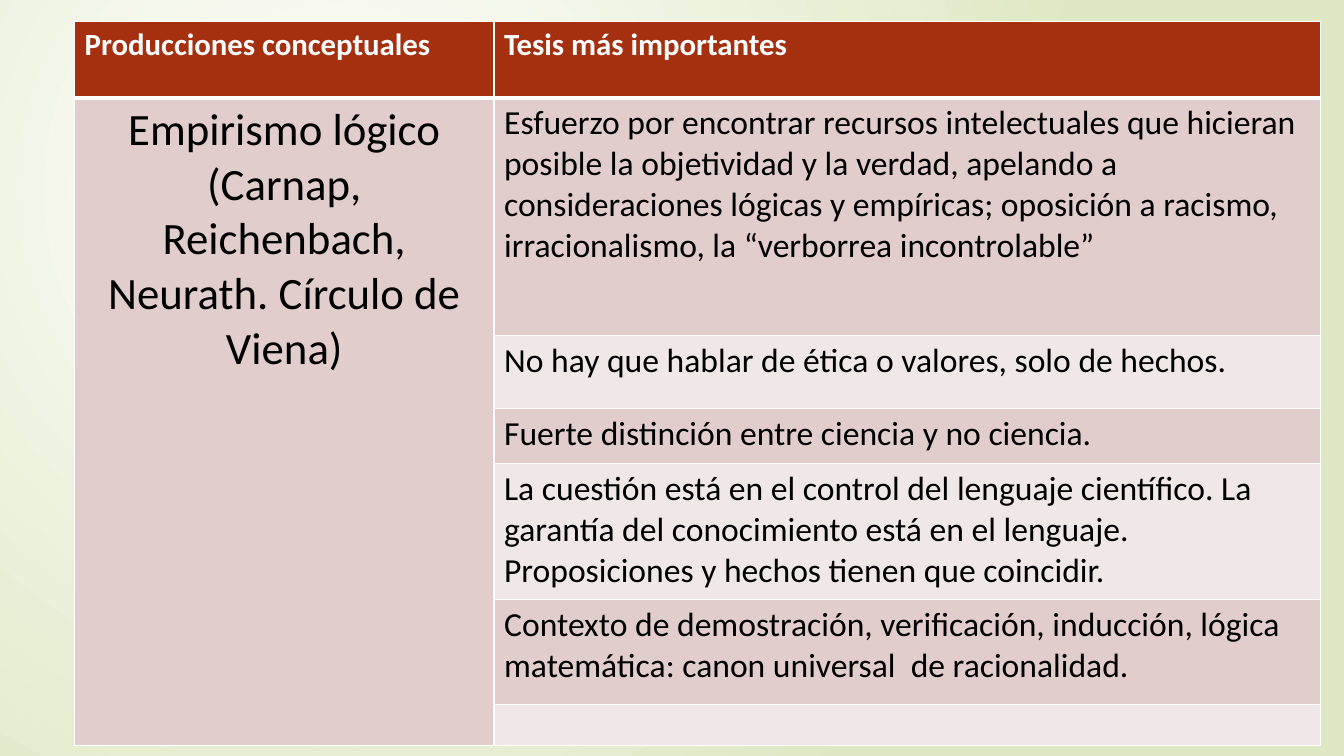
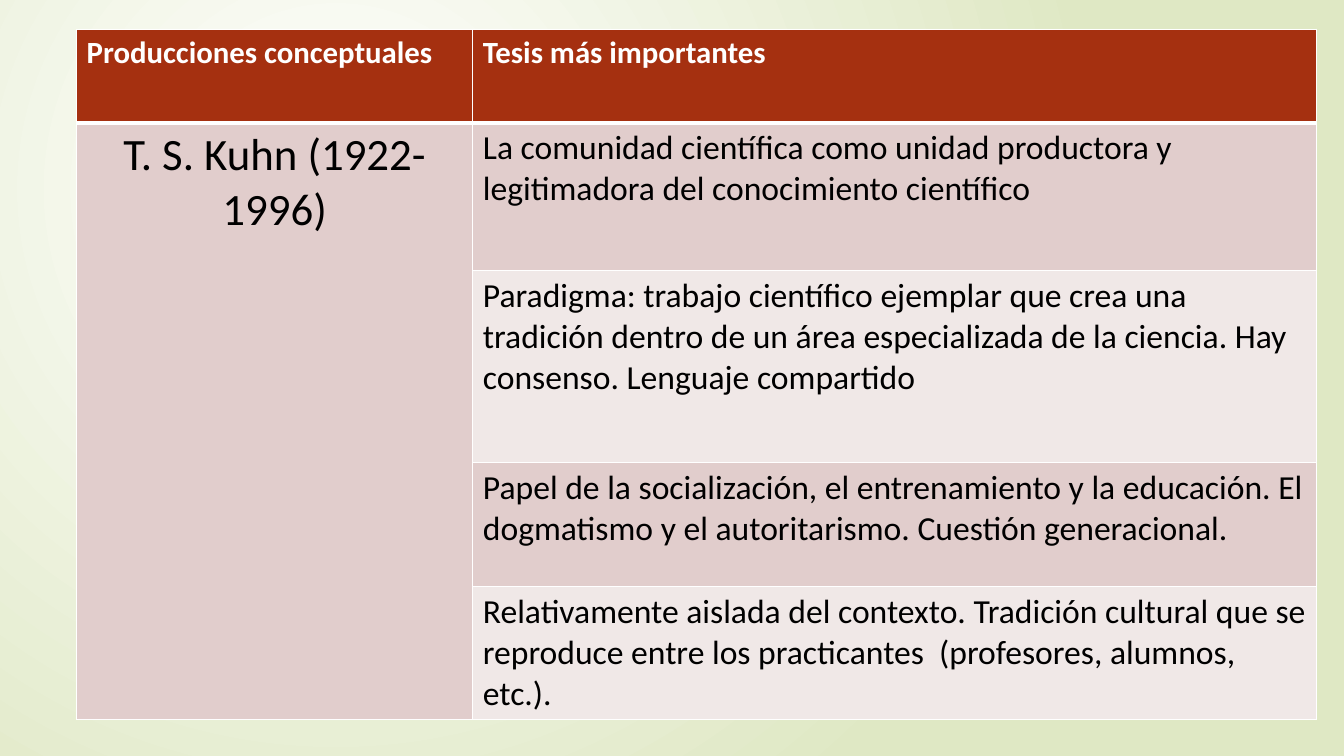
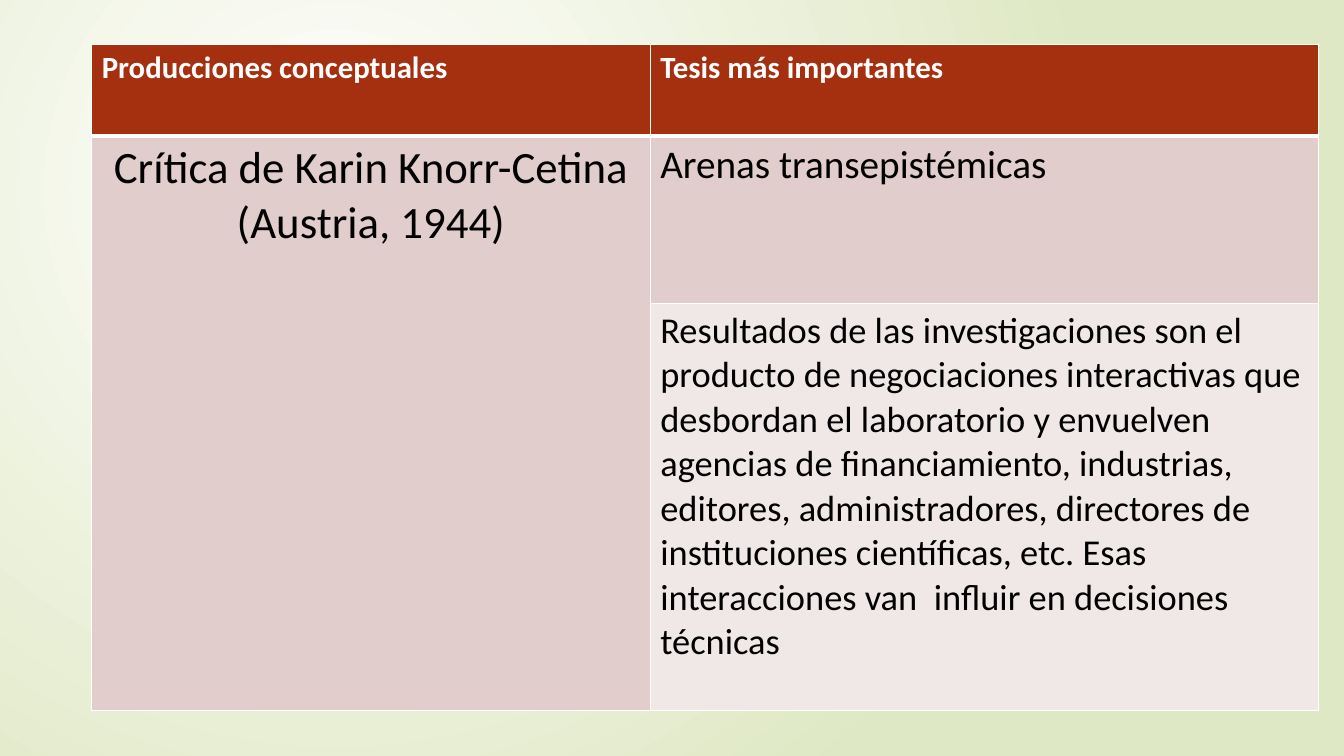
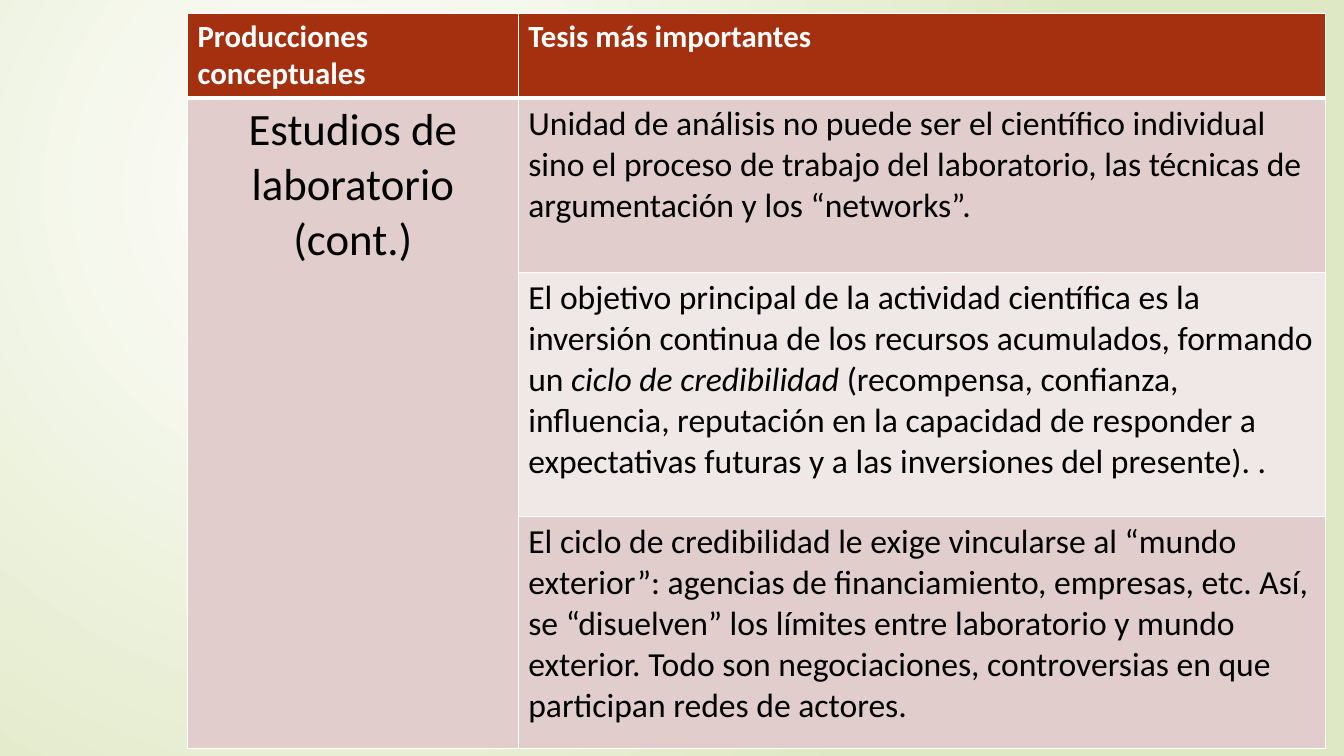
from dataclasses import dataclass

from pptx import Presentation
from pptx.dml.color import RGBColor
from pptx.enum.text import PP_ALIGN
from pptx.oxml import parse_xml
from pptx.oxml.ns import nsdecls
from pptx.util import Pt

PX = 9144  # EMU per px, 100 px to the inch


@dataclass(frozen=True)
class Theme:
    font: str = "Calibri"
    white: str = "FFFFFF"
    black: str = "000000"
    backdrop: str = "DFE8C4"
    header: str = "A53010"
    bands: tuple = ("E1CDCC", "F0E8E7")
    header_size: int = 22
    topic_size: int = 32
    thesis_size: int = 24
    border: int = 1
    header_border: int = 3


theme = Theme()
HEADINGS = ("Producciones conceptuales", "Tesis más importantes")
HEADER_FORMAT = {"name": theme.font, "size": Pt(theme.header_size), "bold": True}
TOPIC_FORMAT = {"name": theme.font, "size": Pt(theme.topic_size), "bold": False}

# Each thesis is (row height, text, optional type size); asterisks enclose italics.
TABLES = [
    {
        "at": (74, 21), "columns": (416, 820), "header_height": 76,
        "topic": "Empirismo lógico\n(Carnap, Reichenbach, Neurath. Círculo de Viena)",
        "theses": [
            (236, "Esfuerzo por encontrar recursos intelectuales que hicieran posible la "
                  "objetividad y la verdad, apelando a consideraciones lógicas y empíricas; "
                  "oposición a racismo, irracionalismo, la “verborrea incontrolable”"),
            (72, "No hay que hablar de ética o valores, solo de hechos."),
            (55, "Fuerte distinción entre ciencia y no ciencia."),
            (135, "La cuestión está en el control del lenguaje científico. La garantía del "
                  "conocimiento está en el lenguaje. Proposiciones y hechos tienen que coincidir."),
            (104, "Contexto de demostración, verificación, inducción, lógica matemática: "
                  "canon universal  de racionalidad."),
            (39, ""),
        ],
    },
    {
        "at": (76, 29), "columns": (393, 837), "header_height": 93,
        "topic": "T. S. Kuhn (1922-1996)",
        "theses": [
            (146, "La comunidad científica como unidad productora y legitimadora del "
                  "conocimiento científico"),
            (191, "Paradigma: trabajo científico ejemplar que crea una tradición dentro de un "
                  "área especializada de la ciencia. Hay consenso. Lenguaje compartido"),
            (123, "Papel de la socialización, el entrenamiento y la educación. El dogmatismo "
                  "y el autoritarismo. Cuestión generacional."),
            (131, "Relativamente aislada del contexto. Tradición cultural que se reproduce "
                  "entre los practicantes  (profesores, alumnos, etc.)."),
        ],
    },
    {
        "at": (91, 44), "columns": (554, 663), "header_height": 91,
        "topic": "Crítica de Karin Knorr-Cetina (Austria, 1944)",
        "theses": [
            (166, "Arenas transepistémicas", 28),
            (404, "Resultados de las investigaciones son el producto de negociaciones "
                  "interactivas que desbordan el laboratorio y envuelven agencias de "
                  "financiamiento, industrias, editores, administradores, directores de "
                  "instituciones científicas, etc. Esas interacciones van  influir en "
                  "decisiones técnicas", 26),
        ],
    },
    {
        "at": (186, 13), "columns": (328, 801), "header_height": 84,
        "topic": "Estudios de laboratorio (cont.)",
        "theses": [
            (173, "Unidad de análisis no puede ser el científico individual sino el proceso "
                  "de trabajo del laboratorio, las técnicas de argumentación y los “networks”."),
            (242, "El objetivo principal de la actividad científica es la inversión continua "
                  "de los recursos acumulados, formando un *ciclo de credibilidad* "
                  "(recompensa, confianza, influencia, reputación en la capacidad de responder "
                  "a expectativas futuras y a las inversiones del presente). ."),
            (230, "El ciclo de credibilidad le exige vincularse al “mundo exterior”: agencias "
                  "de financiamiento, empresas, etc. Así, se “disuelven” los límites entre "
                  "laboratorio y mundo exterior. Todo son negociaciones, controversias en que "
                  "participan redes de actores."),
        ],
    },
]


def write_text(cell, text, font_format, color, alignment=PP_ALIGN.LEFT):
    """Fill a cell with one paragraph per line; text between asterisks is italic."""
    for index, line in enumerate(text.split("\n")):
        frame = cell.text_frame
        paragraph = frame.add_paragraph() if index else frame.paragraphs[0]
        paragraph.alignment = alignment
        for part, words in enumerate(line.split("*")):
            if not words:
                continue
            run = paragraph.add_run()
            run.text = words
            for attribute, value in font_format.items():
                setattr(run.font, attribute, value)
            run.font.italic = part % 2 == 1
            run.font.color.rgb = RGBColor.from_string(color)


def paint_cell(cell, color, widths):
    """Set the fill and the left, right, top and bottom border widths in points."""
    cell.fill.solid()
    cell.fill.fore_color.rgb = RGBColor.from_string(color)
    properties = cell.fill._xPr
    for position, (side, width) in enumerate(zip("LRTB", widths)):
        properties.insert(position, parse_xml(
            f'<a:ln{side} {nsdecls("a")} w="{Pt(width)}"><a:solidFill>'
            f'<a:srgbClr val="{theme.white}"/></a:solidFill></a:ln{side}>'))


presentation = Presentation()
presentation.slide_width = 1333 * PX
presentation.slide_height = 750 * PX

master = presentation.slide_master
master.background.fill.solid()
background = master.element.xpath("p:cSld/p:bg/p:bgPr")[0]
background.replace(background[0], parse_xml(
    f'<a:gradFill {nsdecls("a")} rotWithShape="1"><a:gsLst>'
    f'<a:gs pos="0"><a:srgbClr val="{theme.white}"/></a:gs>'
    f'<a:gs pos="100000"><a:srgbClr val="{theme.backdrop}"/></a:gs></a:gsLst>'
    '<a:path path="circle"><a:fillToRect l="50000" t="50000" r="100000" b="100000"/></a:path>'
    '</a:gradFill>'))

blank_layout = presentation.slide_layouts[6]

for content in TABLES:
    slide = presentation.slides.add_slide(blank_layout)
    heights = [content["header_height"], *(thesis[0] for thesis in content["theses"])]
    left, top = content["at"]
    table = slide.shapes.add_table(
        len(heights), 2, left * PX, top * PX,
        sum(content["columns"]) * PX, sum(heights) * PX).table
    table.first_row = table.horz_banding = False
    for column, width in zip(table.columns, content["columns"]):
        column.width = width * PX
    for row, height in zip(table.rows, heights):
        row.height = height * PX

    for row_index in range(len(heights)):
        for column_index in range(2):
            if row_index == 0:
                color = theme.header
            else:
                color = theme.bands[(row_index - 1) * column_index % 2]
            above = theme.header_border if row_index == 1 else theme.border
            below = theme.header_border if row_index == 0 else theme.border
            paint_cell(table.cell(row_index, column_index), color,
                       (theme.border, theme.border, above, below))

    for column_index, heading in enumerate(HEADINGS):
        write_text(table.cell(0, column_index), heading, HEADER_FORMAT, theme.white)

    topic_cell = table.cell(1, 0)
    topic_cell.merge(table.cell(len(heights) - 1, 0))
    write_text(topic_cell, content["topic"], TOPIC_FORMAT, theme.black, PP_ALIGN.CENTER)

    for row_index, (_, text, *size) in enumerate(content["theses"], start=1):
        thesis_format = TOPIC_FORMAT | {"size": Pt(size[0] if size else theme.thesis_size)}
        write_text(table.cell(row_index, 1), text, thesis_format, theme.black)

presentation.save("out.pptx")
